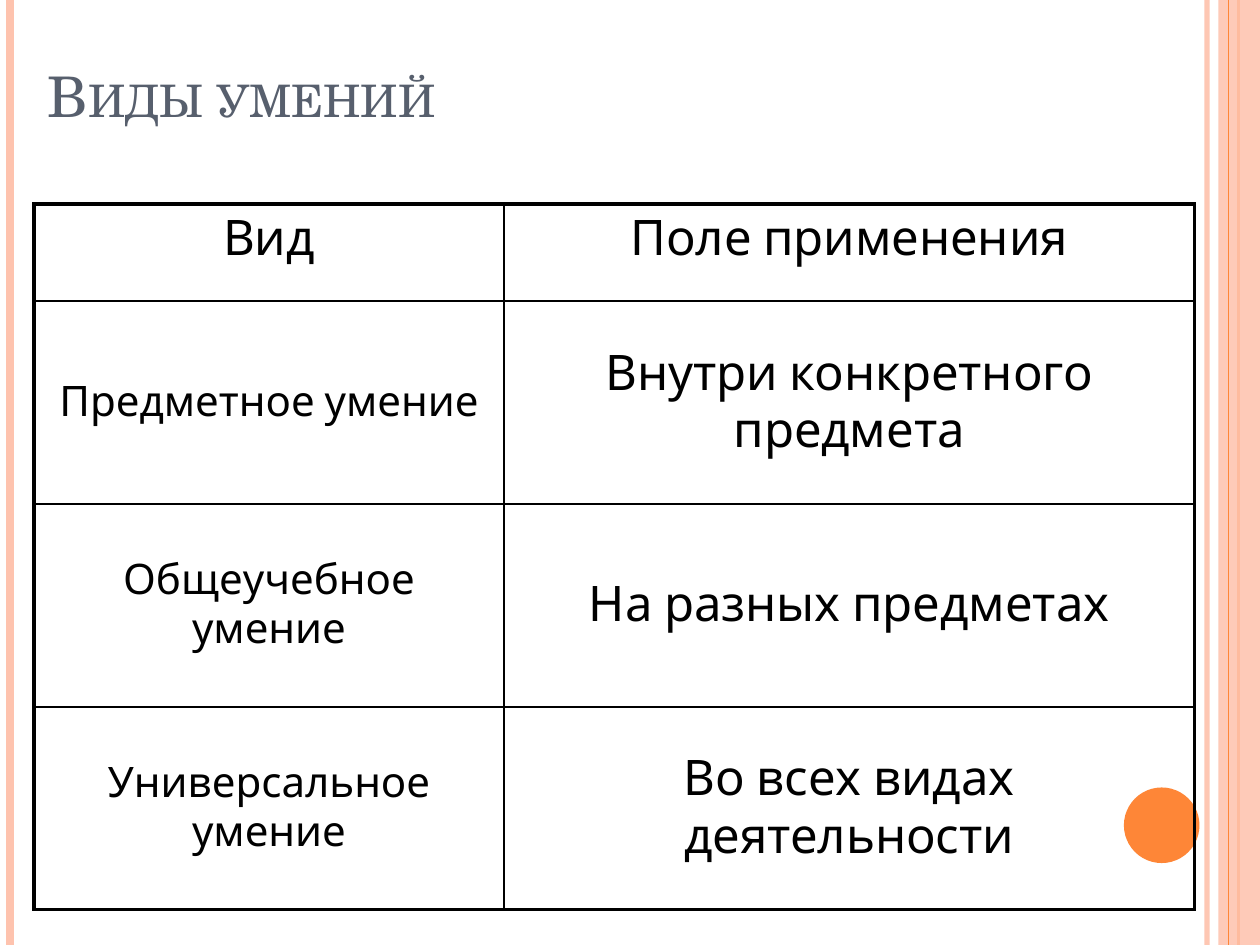
import pptx
import pptx.dml.color
import pptx.enum.shapes
import pptx.enum.text
import pptx.oxml
import pptx.oxml.ns
import pptx.util
from lxml import etree
from pptx.util import Inches

ORANGE = "FE8637"
PEACH = "FEC3AE"
BLACK = "000000"
THIN, THICK = 1, 2.25
COLUMN_WIDTHS = [3.73, 5.48]
ROW_HEIGHTS = [0.77, 1.61, 1.61, 1.61]
ROWS = [
    ("Вид", "Поле применения"),
    ("Предметное умение", "Внутри конкретного предмета"),
    ("Общеучебное умение", "На разных предметах"),
    ("Универсальное умение", "Во всех видах деятельности"),
]


def color(value):
    return pptx.dml.color.RGBColor.from_string(value)


def add_element(parent, tag, **attributes):
    return etree.SubElement(parent, pptx.oxml.ns.qn(tag), **attributes)


def set_opacity(properties, percent):
    """Make the solid fill found below the given XML element see-through."""
    fill_color = next(properties.iter(pptx.oxml.ns.qn("a:srgbClr")))
    add_element(fill_color, "a:alpha", val=str(percent * 1000))


def add_vertical_line(slide, x, width, line_color, opacity=100):
    line = slide.shapes.add_connector(
        pptx.enum.shapes.MSO_CONNECTOR.STRAIGHT,
        Inches(x), Inches(0), Inches(x), Inches(7.5))
    line.line.width = pptx.util.Pt(width)
    line.line.color.rgb = color(line_color)
    properties = line._element.spPr
    if opacity < 100:
        set_opacity(properties, opacity)
    add_element(properties, "a:effectLst")


def add_filled_shape(slide, kind, left, top, width, height, fill, opacity=100):
    shape = slide.shapes.add_shape(
        kind, Inches(left), Inches(top), Inches(width), Inches(height))
    shape.shadow.inherit = False
    shape.fill.solid()
    shape.fill.fore_color.rgb = color(fill)
    shape.line.fill.background()
    if opacity < 100:
        set_opacity(shape._element.spPr, opacity)


def write_text(frame, text, *, size, font, text_color, align,
               small_caps=False, space_before=0):
    """Fill a text frame; space_before is a percentage of the line."""
    paragraph = frame.paragraphs[0]
    paragraph.alignment = align
    if space_before:
        spacing = add_element(paragraph._p.get_or_add_pPr(), "a:spcBef")
        add_element(spacing, "a:spcPct", val=str(space_before * 1000))
    run = paragraph.add_run()
    run.text = text
    run.font.size = pptx.util.Pt(size)
    run.font.name = font
    run.font.bold = False
    run.font.color.rgb = color(text_color)
    if small_caps:
        run.font._element.set("cap", "small")


def set_borders(cell, **widths):
    properties = cell._tc.get_or_add_tcPr()
    for side in "LRTB":
        border = add_element(properties, f"a:ln{side}",
                             w=str(pptx.util.Pt(widths[side])))
        fill = add_element(border, "a:solidFill")
        add_element(fill, "a:srgbClr", val=BLACK)


def add_decoration(slide):
    shapes = pptx.enum.shapes.MSO_SHAPE
    add_vertical_line(slide, 9.58, 3, PEACH, opacity=93)
    add_vertical_line(slide, 0.08, 4.5, PEACH)
    add_vertical_line(slide, 9.83, 1.5, ORANGE)
    add_filled_shape(slide, shapes.RECTANGLE, 9.67, 0, 0.33, 7.5, PEACH, opacity=87)
    add_vertical_line(slide, 9.75, 0.75, ORANGE)
    add_filled_shape(slide, shapes.OVAL, 8.92, 6.25, 0.6, 0.6, ORANGE)


def set_title(slide, text):
    title = slide.shapes.title
    title.left, title.top = Inches(0.28), Inches(0.23)
    title.width, title.height = Inches(9.51), Inches(0.84)
    title.text_frame.vertical_anchor = pptx.enum.text.MSO_ANCHOR.BOTTOM
    write_text(title.text_frame, text, size=32, font="TeX Gyre Schola",
               text_color="575F6D", align=pptx.enum.text.PP_ALIGN.LEFT,
               small_caps=True)


def add_skills_table(slide):
    table = slide.shapes.add_table(
        len(ROWS), len(COLUMN_WIDTHS), Inches(0.27), Inches(1.62),
        Inches(sum(COLUMN_WIDTHS)), Inches(sum(ROW_HEIGHTS))).table
    table.first_row = table.horz_banding = False
    for column, width in zip(table.columns, COLUMN_WIDTHS):
        column.width = Inches(width)
    for row, height in zip(table.rows, ROW_HEIGHTS):
        row.height = Inches(height)

    anchors = pptx.enum.text.MSO_ANCHOR
    last_row, last_column = len(ROWS) - 1, len(COLUMN_WIDTHS) - 1
    for row_index, texts in enumerate(ROWS):
        for column_index, text in enumerate(texts):
            cell = table.cell(row_index, column_index)
            is_header = row_index == 0
            is_skill_name = column_index == 0 and not is_header
            set_borders(
                cell,
                L=THICK if column_index == 0 else THIN,
                R=THICK if column_index == last_column else THIN,
                T=THICK if is_header else THIN,
                B=THICK if row_index == last_row else THIN)
            cell.fill.background()
            cell.vertical_anchor = anchors.TOP if is_header else anchors.MIDDLE
            write_text(cell.text_frame, text, size=24 if is_skill_name else 28,
                       font="Karla", text_color=BLACK, space_before=20,
                       align=pptx.enum.text.PP_ALIGN.CENTER)


def main():
    presentation = pptx.Presentation()
    presentation.slide_width = Inches(10)
    presentation.slide_height = Inches(7.5)
    title_only = presentation.slide_layouts[5]
    slide = presentation.slides.add_slide(title_only)
    add_decoration(slide)
    set_title(slide, "Виды умений")
    add_skills_table(slide)
    presentation.save("out.pptx")


if __name__ == "__main__":
    main()
